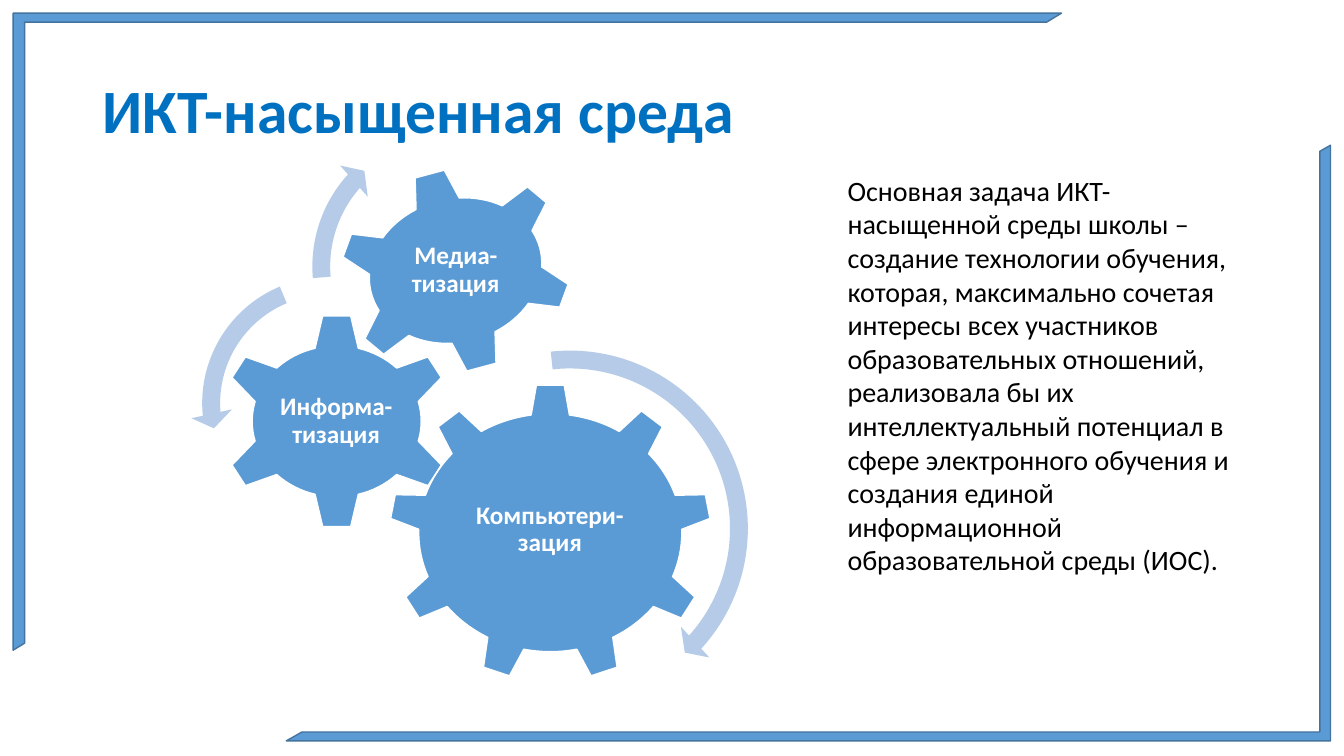
from dataclasses import dataclass

from pptx import Presentation
from pptx.dml.color import RGBColor
from pptx.enum.shapes import MSO_SHAPE
from pptx.enum.text import MSO_ANCHOR, PP_ALIGN
from pptx.util import Pt

HALF_FRAME = MSO_SHAPE.HALF_FRAME
GEAR_6, GEAR_9 = MSO_SHAPE.GEAR_6, MSO_SHAPE.GEAR_9
CLOCKWISE, COUNTERCLOCKWISE = MSO_SHAPE.CIRCULAR_ARROW, MSO_SHAPE.LEFT_CIRCULAR_ARROW
LEFT, CENTER = PP_ALIGN.LEFT, PP_ALIGN.CENTER
TOP, MIDDLE = MSO_ANCHOR.TOP, MSO_ANCHOR.MIDDLE


@dataclass(frozen=True)
class Theme:
    font: str = "Calibri"
    accent: RGBColor = RGBColor(0x5B, 0x9B, 0xD5)
    frame_line: RGBColor = RGBColor(0x43, 0x73, 0x9E)
    arrow: RGBColor = RGBColor(0xB5, 0xCB, 0xE7)
    title: RGBColor = RGBColor(0x00, 0x70, 0xC0)
    text: RGBColor = RGBColor(0x00, 0x00, 0x00)
    white: RGBColor = RGBColor(0xFF, 0xFF, 0xFF)
    title_size: int = 44
    label_size: int = 18
    body_size: int = 20


THEME = Theme()


def add_figure(slide, kind, box, fill, line=None, rotation=0, adjustments=()):
    shape = slide.shapes.add_shape(kind, *map(Pt, box))
    shape.shadow.inherit = False
    shape.rotation = rotation
    shape.fill.solid()
    shape.fill.fore_color.rgb = fill
    if line is None:
        shape.line.fill.background()
    else:
        shape.line.color.rgb = line
        shape.line.width = Pt(1)
    for index, value in enumerate(adjustments):
        shape.adjustments[index] = value


def write_text(shape, text, size, color, bold, alignment, anchor, spacing, margins=(7.2, 3.6)):
    frame = shape.text_frame
    side, edge = map(Pt, margins)
    frame_format = {"word_wrap": True, "vertical_anchor": anchor, "margin_left": side,
                    "margin_right": side, "margin_top": edge, "margin_bottom": edge}
    for name, value in frame_format.items():
        setattr(frame, name, value)
    paragraph = frame.paragraphs[0]
    paragraph.alignment = alignment
    paragraph.line_spacing = spacing
    run = paragraph.add_run()
    run.text = text
    for name, value in {"name": THEME.font, "size": Pt(size), "bold": bold}.items():
        setattr(run.font, name, value)
    run.font.color.rgb = color


presentation = Presentation()
presentation.slide_width, presentation.slide_height = Pt(960), Pt(540)
slide = presentation.slides.add_slide(presentation.slide_layouts[5])

# Corner frames
for box, rotation, adjustments in (
    ((9.4, 9.4, 748.8, 455), 0, (0.014, 0.018)),
    ((204.5, 103.7, 745.9, 425.5), 180, (0.015, 0.018)),
):
    add_figure(slide, HALF_FRAME, box, THEME.accent, THEME.frame_line, rotation, adjustments)

# Title
title = slide.shapes.title
for name, value in {"left": 66.2, "top": 28.8, "width": 828, "height": 104.4}.items():
    setattr(title, name, Pt(value))
write_text(title, "ИКТ-насыщенная среда", THEME.title_size, THEME.title, True, LEFT, MIDDLE, 0.9)

# Gears with their labels
for kind, box, rotation, label, label_box in (
    (GEAR_9, (277.9, 274.3, 230.4, 212.4), 0, "Компьютери-зация", (322.6, 324, 140.4, 108.7)),
    (GEAR_6, (157, 223.9, 167, 154.1), 0, "Информа-тизация", (197.3, 262.8, 85.7, 76.3)),
    (GEAR_6, (241.2, 120.2, 168.5, 146.2), 345, "Медиа-тизация", (279.4, 150.5, 92.2, 85)),
):
    add_figure(slide, kind, box, THEME.accent, THEME.white, rotation)
    label_shape = slide.shapes.add_textbox(*map(Pt, label_box))
    write_text(label_shape, label, THEME.label_size, THEME.white, True, CENTER, MIDDLE, 0.9,
               margins=(2.2, 2.2))

# Rotation arrows
for kind, left, top, side, adjustments in (
    (CLOCKWISE, 271.4, 241.9, 271.4, (0.047, 2.99, 25.31, 158.3, 0.055)),
    (COUNTERCLOCKWISE, 136.1, 189.4, 197.3, (0.065, 4.3, 104.89, 148.38, 0.075)),
    (CLOCKWISE, 214.6, 84.2, 212.4, (0.06, 3.94, 133.14, 105.08, 0.07)),
):
    add_figure(slide, kind, (left, top, side, side), THEME.arrow, adjustments=adjustments)

# Main task
task = slide.shapes.add_textbox(Pt(598.3), Pt(120.2), Pt(303.8), Pt(298.1))
write_text(
    task,
    "Основная задача ИКТ-насыщенной среды школы – создание технологии обучения, "
    "которая, максимально сочетая интересы всех участников образовательных отношений, "
    "реализовала бы их интеллектуальный потенциал в сфере электронного обучения и "
    "создания единой информационной образовательной среды (ИОС).",
    THEME.body_size, THEME.text, False, LEFT, TOP, 1.0,
)

presentation.save("out.pptx")
